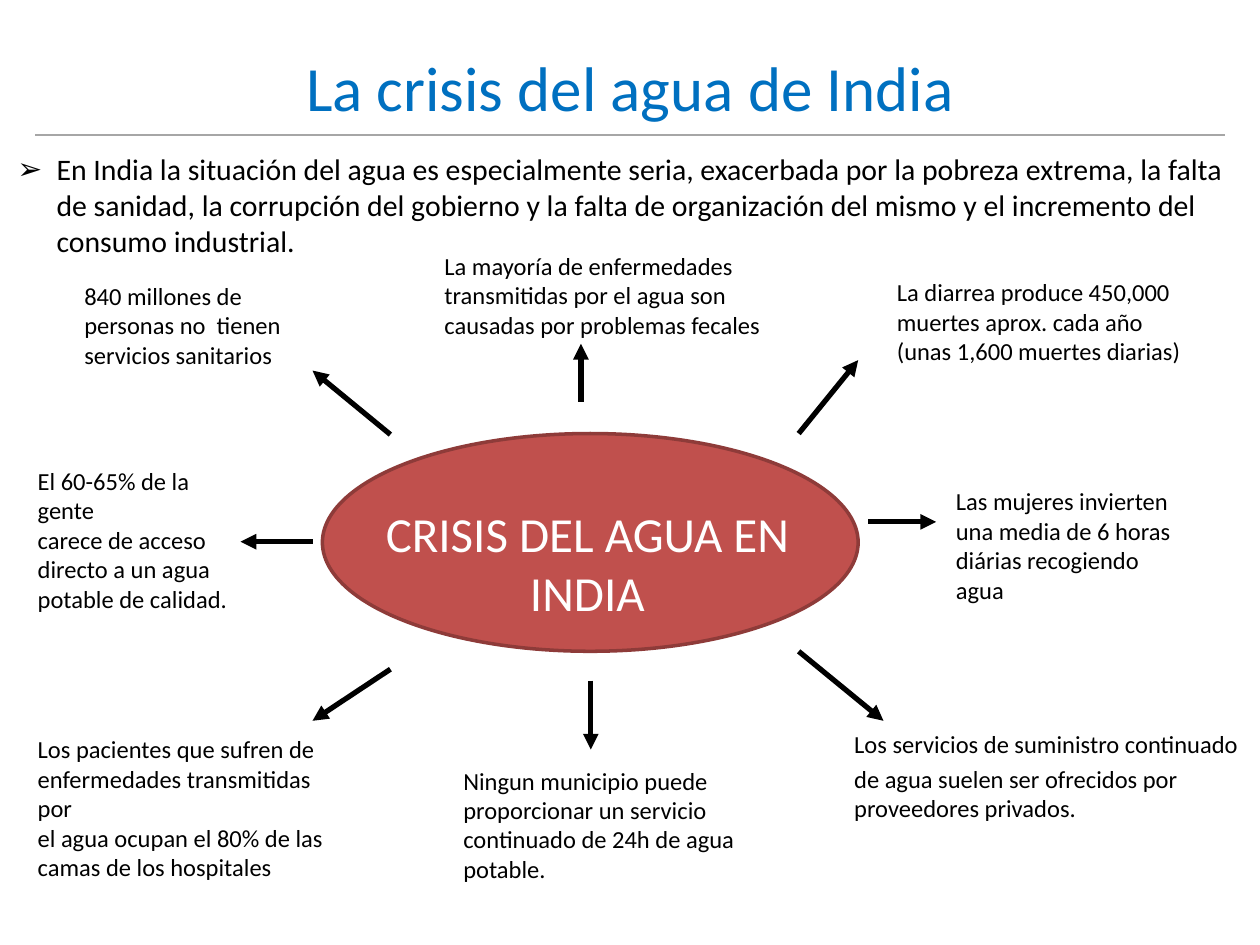
from lxml import etree
from pptx import Presentation
from pptx import util as u
from pptx.dml.color import RGBColor
from pptx.enum import shapes, text
from pptx.oxml import ns

BLACK = RGBColor(0x00, 0x00, 0x00)
WHITE = RGBColor(0xFF, 0xFF, 0xFF)
BLUE = RGBColor(0x00, 0x70, 0xC0)
GREY = RGBColor(0xA6, 0xA6, 0xA6)
RED = RGBColor(0xC0, 0x50, 0x4D)
DARK_RED = RGBColor(0x8E, 0x3B, 0x39)

TOP, MIDDLE = text.MSO_ANCHOR.TOP, text.MSO_ANCHOR.MIDDLE
LEFT, CENTER = text.PP_ALIGN.LEFT, text.PP_ALIGN.CENTER

INTRO = [
    "En India la situación del agua es especialmente seria, exacerbada por la pobreza extrema, la falta",
    "de sanidad, la corrupción del gobierno y la falta de organización del mismo y el incremento del",
    "consumo industrial.",
]

# Facts that wrap in their box: box, text, arrow from the centre
WRAPPED_FACTS = [
    ((1.45, 5.54, 5.05, 2.06),
     "840 millones de personas no  tienen servicios sanitarios",
     (7.87, 8.76, 6.3, 7.47)),
    ((8.71, 4.93, 6.88, 2.06),
     "La mayoría de enfermedades transmitidas por el agua son causadas por problemas fecales",
     (11.71, 8.1, 11.71, 6.93)),
    ((19.02, 9.68, 5.05, 2.64),
     "Las mujeres invierten una media de 6 horas diárias recogiendo agua",
     (17.5, 10.52, 18.87, 10.52)),
]

# Facts with fixed line breaks: box, paragraphs, arrow from the centre
FIXED_FACTS = [
    ((17.83, 5.3, 6.55, 2.36),
     ["La diarrea produce 450,000\nmuertes aprox. cada año\n(unas 1,600 muertes diarias)"],
     (16.1, 8.74, 17.3, 7.26)),
    ((0.51, 8.92, 4.37, 3.91),
     ["El 60-65% de la gente\ncarece de acceso\ndirecto a un agua\npotable de calidad."],
     (6.3, 10.92, 4.85, 10.92)),
    ((0.51, 14.76, 6.81, 3.05),
     ["Los pacientes que sufren de\nenfermedades transmitidas por\n"
      "el agua ocupan el 80% de las\ncamas de los hospitales"],
     (7.87, 13.49, 6.3, 14.53)),
    ((9.09, 14.73, 6.81, 3.78),
     ["Ningun municipio puede\nproporcionar un servicio\ncontinuado de 24h de agua\npotable."],
     (11.91, 13.72, 11.91, 15.11)),
    ((16.97, 13.84, 8.3, 3.61),
     ["Los servicios de suministro continuado",
      "de agua suelen ser ofrecidos por\nproveedores privados."],
     (16.1, 13.13, 17.81, 14.53)),
]


class Diagram:
    font = "Calibri"

    def __init__(self, slide):
        self.slide = slide

    def text(self, box, paragraphs, size=14, color=BLACK, align=LEFT,
             anchor=TOP, wrap=True, gap=0):
        frame = self.slide.shapes.add_textbox(*map(u.Cm, box)).text_frame
        frame.word_wrap = wrap
        frame.vertical_anchor = anchor
        for i, content in enumerate(paragraphs):
            paragraph = frame.add_paragraph() if i else frame.paragraphs[0]
            paragraph.alignment = align
            paragraph.space_before = u.Pt(gap if i else 0)
            for j, line in enumerate(content.split("\n")):
                if j:
                    paragraph.add_line_break()
                run = paragraph.add_run()
                run.text = line
                run.font.name = self.font
                run.font.size = u.Pt(size)
                run.font.color.rgb = color
        return frame

    def bulleted(self, box, lines, size, indent):
        """One bullet on the first line, the others aligned with its text."""
        frame = self.text(box, lines, size)
        for i, paragraph in enumerate(frame.paragraphs):
            props = paragraph._p.get_or_add_pPr()
            props.set("marL", str(u.Cm(indent)))
            props.set("indent", str(0 if i else -u.Cm(indent)))
            if i == 0:
                etree.SubElement(props, ns.qn("a:buFont"), typeface="Arial")
                etree.SubElement(props, ns.qn("a:buChar"), char="➢")

    def line(self, ends, color, width):
        connector = self.slide.shapes.add_connector(
            shapes.MSO_CONNECTOR.STRAIGHT, *map(u.Cm, ends))
        connector.line.color.rgb = color
        connector.line.width = u.Pt(width)
        etree.SubElement(connector._element.spPr, ns.qn("a:effectLst"))
        return connector

    def arrow(self, ends):
        outline = self.line(ends, BLACK, 3).line._get_or_add_ln()
        etree.SubElement(outline, ns.qn("a:tailEnd"), type="triangle")

    def ellipse(self, box, fill, outline):
        oval = self.slide.shapes.add_shape(
            shapes.MSO_SHAPE.OVAL, *map(u.Cm, box))
        oval.shadow.inherit = False
        oval.fill.solid()
        oval.fill.fore_color.rgb = fill
        oval.line.color.rgb = outline
        oval.line.width = u.Pt(2)


def main():
    deck = Presentation()
    deck.slide_width, deck.slide_height = u.Cm(25.4), u.Cm(19.05)
    diagram = Diagram(deck.slides.add_slide(deck.slide_layouts[6]))

    # Title and rule
    diagram.text((1.27, 0.76, 22.86, 1.96), ["La crisis del agua de India"],
                 36, BLUE, CENTER, MIDDLE)
    diagram.line((0.71, 2.72, 24.69, 2.72), GREY, 0.75)

    # Introduction
    diagram.bulleted((0.1, 2.92, 25.8, 3.89), INTRO, 17, 0.79)

    # Central topic
    diagram.ellipse((6.5, 8.74, 10.8, 4.39), RED, DARK_RED)
    diagram.text((6.71, 10.03, 10.26, 2.64), ["CRISIS DEL AGUA EN INDIA"],
                 28, WHITE, CENTER)

    # Facts around it
    for box, fact, arrow in WRAPPED_FACTS:
        diagram.text(box, [fact])
        diagram.arrow(arrow)
    for box, paragraphs, arrow in FIXED_FACTS:
        diagram.text(box, paragraphs, anchor=MIDDLE, wrap=False, gap=2.8)
        diagram.arrow(arrow)

    deck.save("out.pptx")


if __name__ == "__main__":
    main()
